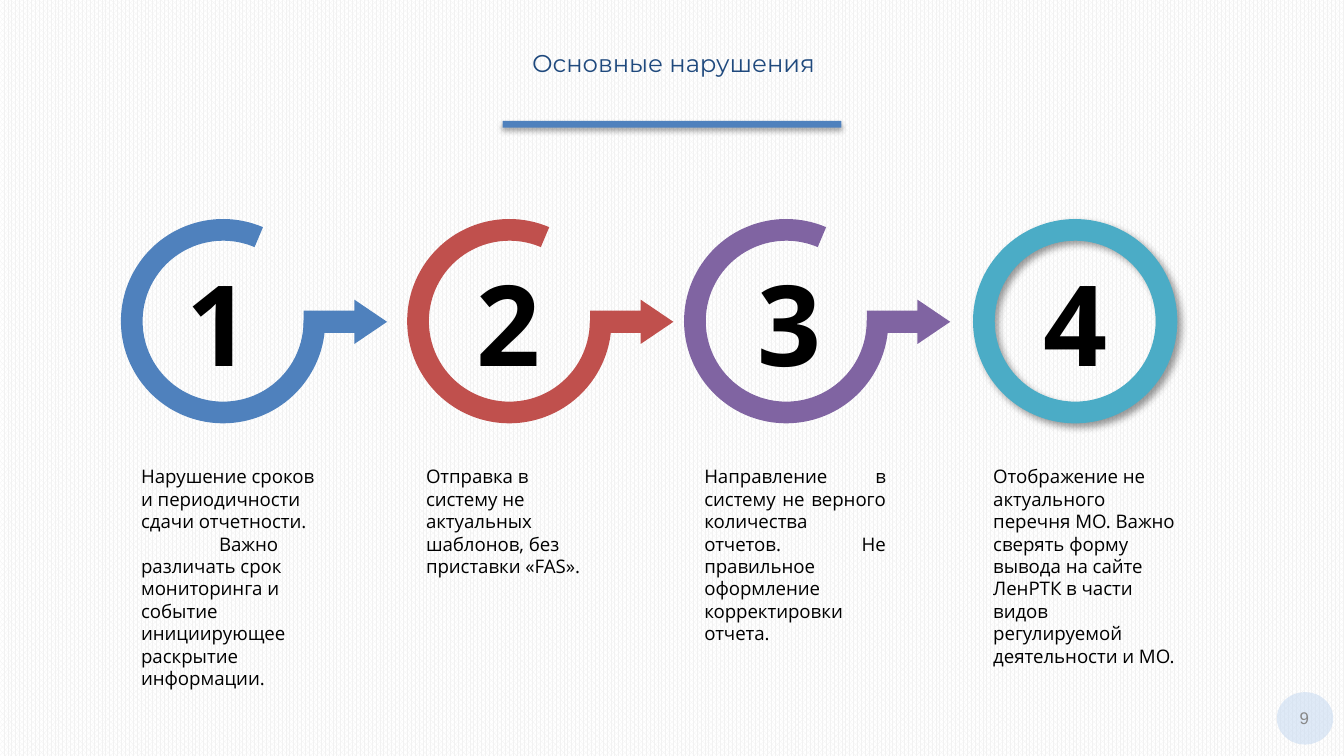
from dataclasses import dataclass

from lxml.etree import SubElement
from pptx import Presentation
from pptx.dml.color import RGBColor
from pptx.enum.dml import MSO_PATTERN
from pptx.enum.shapes import MSO_SHAPE
from pptx.enum.text import MSO_ANCHOR, MSO_AUTO_SIZE, PP_ALIGN
from pptx.oxml.ns import qn
from pptx.util import Inches, Pt


@dataclass(frozen=True)
class Theme:
    """Colours, fonts and type sizes of the slide."""

    title: str = "1F497D"
    text: str = "000000"
    muted: str = "888888"
    accent: str = "4F81BD"
    badge: str = "C6D9F1"
    pattern: str = "F2F2F2"
    paper: str = "FFFFFF"
    steps: tuple = ("4F81BD", "C0504D", "8064A2", "4BACC6")
    title_font: str = "Montserrat"
    body_font: str = "Open Sans"
    page_font: str = "Arial"
    title_size: float = 13
    number_size: float = 60
    body_size: float = 10
    page_size: float = 9


@dataclass(frozen=True)
class Step:
    """Left edges, text width and wording of one violation."""

    ring_left: float
    number_left: float
    text_left: float
    text_width: float
    text_height: float
    paragraphs: tuple
    align: PP_ALIGN = PP_ALIGN.LEFT
    indent: float = 0


STEPS = (
    Step(0.9, 0.9, 0.98, 1.52, 1.42, (
        "Нарушение сроков и периодичности сдачи отчетности.",
        "Важно различать срок мониторинга и событие инициирующее раскрытие информации.",
    ), indent=0.58),
    Step(3.03, 3.06, 3.1, 1.46, 0.58, (
        "Отправка в систему не актуальных шаблонов, без приставки «FAS».",
    )),
    Step(5.09, 5.15, 5.17, 1.49, 0.92, (
        "Направление в систему не верного количества отчетов. "
        "Не правильное оформление корректировки отчета.",
    ), align=PP_ALIGN.JUSTIFY),
    Step(7.24, 7.28, 7.32, 1.51, 1.25, (
        "Отображение не актуального перечня МО. Важно сверять форму вывода "
        "на сайте ЛенРТК в части видов регулируемой деятельности и МО.",
    )),
)
RING_TOP, RING_SIZE = 1.63, 1.52
ARC_END, ARC_THICKNESS = 175.81, 0.106
OPEN_START, CLOSED_START = 215.7, 175.93


class SlideBuilder:
    """Draws styled elements on the current slide."""

    def __init__(self, slide, theme):
        self.slide = slide
        self.theme = theme

    def background(self):
        """Fill the background with a fine pattern."""
        fill = self.slide.background.fill
        fill.patterned()
        fill.pattern = MSO_PATTERN.PERCENT_80
        fill.fore_color.rgb = RGBColor.from_string(self.theme.pattern)
        fill.back_color.rgb = RGBColor.from_string(self.theme.paper)

    def shape(self, kind, box, color, adjustments=(), shapes=None):
        """Add a flat preset shape without outline."""
        shapes = self.slide.shapes if shapes is None else shapes
        shape = shapes.add_shape(kind, *map(Inches, box))
        shape.shadow.inherit = False
        shape.fill.solid()
        shape.fill.fore_color.rgb = RGBColor.from_string(color)
        shape.line.fill.background()
        for index, value in enumerate(adjustments):
            shape.adjustments[index] = value
        return shape

    def shadow(self, shape, opacity, blur, distance, angle):
        """Give a shape an outer shadow."""
        effects = shape.element.spPr.find(qn("a:effectLst"))
        outer = SubElement(effects, qn("a:outerShdw"), blurRad=str(Pt(blur)),
                           dist=str(Pt(distance)), dir=str(angle * 60000),
                           algn="tl", rotWithShape="0")
        color = SubElement(outer, qn("a:srgbClr"), val=self.theme.text)
        SubElement(color, qn("a:alpha"), val=str(opacity * 1000))

    def translucent(self, shape, opacity):
        """Set the opacity of a solid fill in percent."""
        color = shape.element.spPr.find(qn("a:solidFill")).find(qn("a:srgbClr"))
        SubElement(color, qn("a:alpha"), val=str(opacity * 1000))

    def text(self, paragraphs, box, *, size, font, color, bold=False,
             align=PP_ALIGN.CENTER, anchor=MSO_ANCHOR.TOP, insets=(0.07, 0.04),
             grow=True, spacing=None, indent=0):
        """Add a text box, indenting the first line of later paragraphs."""
        frame = self.slide.shapes.add_textbox(*map(Inches, box)).text_frame
        frame.word_wrap = True
        frame.auto_size = MSO_AUTO_SIZE.SHAPE_TO_FIT_TEXT if grow else MSO_AUTO_SIZE.NONE
        frame.vertical_anchor = anchor
        frame.margin_left = frame.margin_right = Inches(insets[0])
        frame.margin_top = frame.margin_bottom = Inches(insets[1])
        for index, wording in enumerate(paragraphs):
            paragraph = frame.add_paragraph() if index else frame.paragraphs[0]
            paragraph.alignment = align
            paragraph.line_spacing = spacing
            if index and indent:
                paragraph._p.get_or_add_pPr().set("indent", str(Inches(indent)))
            run = paragraph.add_run()
            run.text = wording
            run.font.size = Pt(size)
            run.font.name = font
            run.font.bold = bold
            run.font.color.rgb = RGBColor.from_string(color)

    def ring(self, left, color, is_last):
        """Add a closed ring, or an open ring leading into an arrow."""
        box = (left, RING_TOP, RING_SIZE, RING_SIZE)
        if is_last:
            ring = self.shape(MSO_SHAPE.BLOCK_ARC, box, color,
                              (CLOSED_START, ARC_END, ARC_THICKNESS))
            self.shadow(ring, 40, 4, 3, 45)
            return
        group = self.slide.shapes.add_group_shape()
        self.shape(MSO_SHAPE.BLOCK_ARC, box, color,
                   (OPEN_START, ARC_END, ARC_THICKNESS), group.shapes)
        self.shape(MSO_SHAPE.RIGHT_ARROW, (left + 1.36, 2.23, 0.62, 0.33), color,
                   (0.5, 0.738), group.shapes)

    def step(self, number, step):
        """Add one numbered violation with its description."""
        theme = self.theme
        self.ring(step.ring_left, theme.steps[number - 1], number == len(STEPS))
        self.text([str(number)], (step.number_left, 1.85, 1.45, 1.09),
                  size=theme.number_size, font=theme.body_font, color=theme.text, bold=True)
        self.text(step.paragraphs, (step.text_left, 3.42, step.text_width, step.text_height),
                  size=theme.body_size, font=theme.body_font, color=theme.text,
                  align=step.align, indent=step.indent)


def main():
    """Build and save the slide."""
    presentation = Presentation()
    presentation.slide_width = Inches(10)
    presentation.slide_height = presentation.slide_width * 9 // 16
    theme = Theme()
    builder = SlideBuilder(presentation.slides.add_slide(presentation.slide_layouts[6]), theme)
    builder.background()
    builder.text(["Основные нарушения"], (0.6, 0.23, 8.82, 0.33), size=theme.title_size,
                 font=theme.title_font, color=theme.title, insets=(0.04, 0.02), spacing=1.5)
    rule = builder.shape(MSO_SHAPE.RECTANGLE, (3.74, 0.9, 2.52, 0.05), theme.accent)
    builder.shadow(rule, 35, 3.1, 1.8, 90)
    badge = builder.shape(MSO_SHAPE.OVAL, (9.5, 5.15, 0.42, 0.39), theme.badge)
    builder.translucent(badge, 55)
    builder.text(["9"], (9.53, 5.17, 0.35, 0.34), size=theme.page_size, font=theme.page_font,
                 color=theme.muted, anchor=MSO_ANCHOR.MIDDLE, insets=(0.1, 0.1), grow=False)
    for number, step in enumerate(STEPS, start=1):
        builder.step(number, step)
    presentation.save("out.pptx")


if __name__ == "__main__":
    main()
